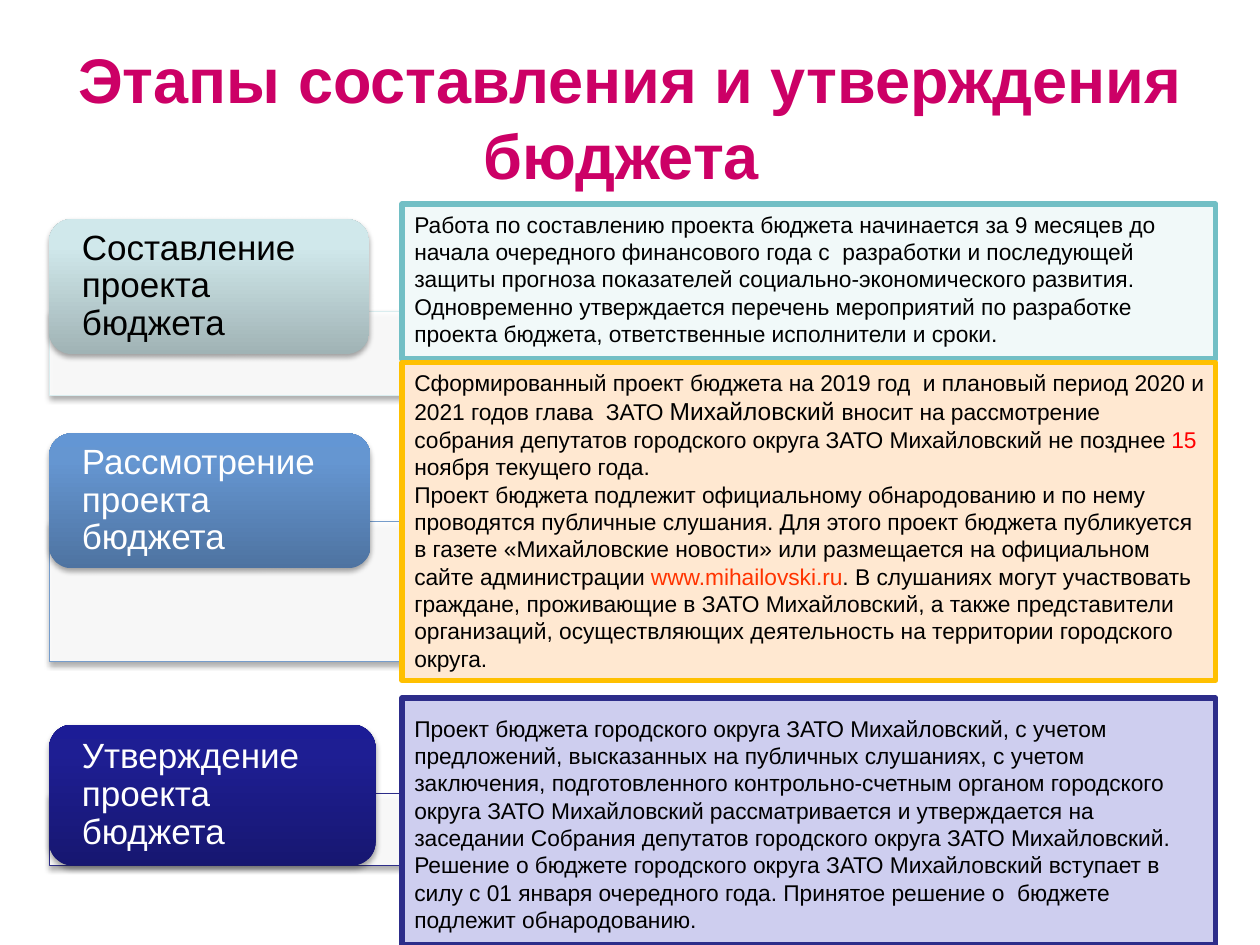
import pptx
import pptx.util
import pptx.dml.color
import pptx.enum.shapes
import pptx.enum.text
import pptx.oxml
import pptx.oxml.ns

deck = pptx.Presentation()
deck.slide_width = pptx.util.Inches(10)
deck.slide_height = pptx.util.Inches(7.5)
page = deck.slides.add_slide(deck.slide_layouts[6])

# Grid of 100 columns by 75 rows
COLUMN = deck.slide_width / 100
ROW = deck.slide_height / 75
LEFT, DETAIL_LEFT = 3.9, 31.9
BAND_WIDTH, DETAIL_WIDTH = 80.5, 64.6
NAMESPACE = pptx.oxml.ns.nsdecls("a")
SHAPES = pptx.enum.shapes.MSO_SHAPE
ANCHORS = pptx.enum.text.MSO_ANCHOR
SHADOW = (f'<a:outerShdw {NAMESPACE} blurRad="40000" dist="23000" dir="5400000" '
          'rotWithShape="0"><a:srgbClr val="000000"><a:alpha val="35000"/>'
          '</a:srgbClr></a:outerShdw>')


def color(value):
    return pptx.dml.color.RGBColor.from_string(value)


def add_box(kind, left, top, width, height, paragraphs=(), align=None, **frame_format):
    """Add a shape (or a text box if kind is None); paragraphs hold (text, size, color)."""
    place = [round(v) for v in (left * COLUMN, top * ROW, width * COLUMN, height * ROW)]
    if kind is None:
        box = page.shapes.add_textbox(*place)
    else:
        box = page.shapes.add_shape(kind, *place)
        box.shadow.inherit = False
    frame = box.text_frame
    frame.word_wrap = True
    for name, value in frame_format.items():
        setattr(frame, name, value)
    for index, spans in enumerate(paragraphs):
        para = frame.add_paragraph() if index else frame.paragraphs[0]
        para.alignment = align or pptx.enum.text.PP_ALIGN.LEFT
        for text, size, shade in spans:
            span = para.add_run()
            span.text = text
            font_format = {"name": "Arial", "size": pptx.util.Pt(size)}
            for name, value in font_format.items():
                setattr(span.font, name, value)
            span.font.color.rgb = color(shade)
    return box


# Stages: label, label color, gradient from bottom to top, band line,
# band top and height, label top, width and height
stages = [
    ("Составление проекта бюджета", "000000", ("A0B3B5", "D0E8EB", "D1EAEC"),
     "DAEDEF", 24.7, 6.7, 17.4, 25.4, 10.7),
    ("Рассмотрение проекта бюджета", "FFFFFF", ("4E73A1", "6596D1", "6396D4"),
     "759CCB", 41.4, 11.1, 34.4, 25.5, 10.7),
    ("Утверждение проекта бюджета", "FFFFFF", ("171771", "1E1E93", "1C1C96"),
     "2D2D8A", 63, 5.7, 57.5, 25.9, 11.2),
]
for (label, label_color, shades, line_color, band_top, band_height,
     top, width, height) in stages:
    # Band behind the label
    band = add_box(SHAPES.RECTANGLE, LEFT, band_top, BAND_WIDTH, band_height)
    band.fill.solid()
    band.fill.fore_color.rgb = color("FFFFFF")
    band.fill._xPr.find(".//" + pptx.oxml.ns.qn("a:srgbClr")).append(
        pptx.oxml.parse_xml(f'<a:alpha {NAMESPACE} val="90000"/>'))
    band.line.color.rgb = color(line_color)
    band.line.width = pptx.util.Pt(0.75)

    # Rounded label
    badge = add_box(SHAPES.ROUNDED_RECTANGLE, LEFT, top, width, height)
    badge.line.fill.background()
    badge.fill.gradient()
    gradient = badge._element.spPr.find(pptx.oxml.ns.qn("a:gradFill"))
    stops = "".join(f'<a:gs pos="{position}000"><a:srgbClr val="{shade}"/></a:gs>'
                    for position, shade in zip((0, 80, 100), shades))
    gradient.getparent().replace(gradient, pptx.oxml.parse_xml(
        f'<a:gradFill {NAMESPACE} rotWithShape="1"><a:gsLst>{stops}</a:gsLst>'
        '<a:lin ang="16200000" scaled="0"/></a:gradFill>'))
    for shape in (band, badge):
        effects = shape._element.spPr.find(pptx.oxml.ns.qn("a:effectLst"))
        effects.append(pptx.oxml.parse_xml(SHADOW))

    # Label text
    caption = add_box(None, LEFT + 0.5, top + 0.5, width - 1, height - 1,
                      [[(label, 20, label_color)]], vertical_anchor=ANCHORS.MIDDLE,
                      margin_left=pptx.util.Inches(0.21),
                      margin_right=pptx.util.Inches(0.21),
                      margin_top=0, margin_bottom=0)
    caption.text_frame.paragraphs[0].line_spacing = 0.9

# Details: top, height, fill, line, top margin in inches, paragraphs
BLACK = "000000"
details = [
    (16.2, 12.3, "F1F9F9", "72BFC5", 0.05, [[
        ("Работа по составлению проекта бюджета начинается за 9 месяцев до начала "
         "очередного финансового года с  разработки и последующей защиты прогноза "
         "показателей социально-экономического развития.  Одновременно утверждается "
         "перечень мероприятий по разработке проекта бюджета, ответственные "
         "исполнители и сроки.", 13, BLACK)]]),
    (28.8, 25.2, "FFE8D1", "FFC000", 0.05, [
        [("Сформированный проект бюджета на 2019 год  и плановый период 2020 и 2021 "
          "годов глава  ЗАТО ", 13, BLACK),
         ("Михайловский ", 14, BLACK),
         ("вносит на рассмотрение собрания депутатов городского округа ЗАТО "
          "Михайловский не позднее ", 13, BLACK),
         ("15", 13, "FF0000"),
         (" ноября текущего года.", 13, BLACK)],
        [("Проект бюджета подлежит официальному обнародованию и по нему проводятся "
          "публичные слушания. Для этого проект бюджета публикуется в газете "
          "«Михайловские новости» или размещается на официальном сайте "
          "администрации ", 13, BLACK),
         ("www.mihailovski.ru", 13, "FF3300"),
         (". В слушаниях могут участвовать граждане, проживающие в ЗАТО "
          "Михайловский, а также представители организаций, осуществляющих "
          "деятельность на территории городского округа.", 13, BLACK)]]),
    (55.4, 19.6, "CECEEF", "2D2D8A", 0.13, [[
        ("Проект бюджета городского округа ЗАТО Михайловский, с учетом предложений, "
         "высказанных на публичных слушаниях, с учетом заключения, подготовленного "
         "контрольно-счетным органом городского округа ЗАТО Михайловский "
         "рассматривается и утверждается на заседании Собрания депутатов городского "
         "округа ЗАТО Михайловский. Решение о бюджете городского округа ЗАТО "
         "Михайловский вступает в силу с 01 января очередного года. Принятое решение "
         "о  бюджете подлежит обнародованию.", 13, BLACK)]]),
]
for top, height, fill_color, line_color, margin, paragraphs in details:
    detail = add_box(SHAPES.RECTANGLE, DETAIL_LEFT, top, DETAIL_WIDTH, height, paragraphs,
                     vertical_anchor=ANCHORS.TOP, margin_top=pptx.util.Inches(margin))
    detail.fill.solid()
    detail.fill.fore_color.rgb = color(fill_color)
    detail.line.color.rgb = color(line_color)
    detail.line.width = pptx.util.Pt(3)

# Title
title = add_box(None, 5, 3, 90, 12.5,
                [[("Этапы составления и утверждения бюджета ", 36, "CC0066")]],
                align=pptx.enum.text.PP_ALIGN.CENTER, vertical_anchor=ANCHORS.MIDDLE)
title.text_frame.paragraphs[0].runs[0].font.bold = True

deck.save("out.pptx")
